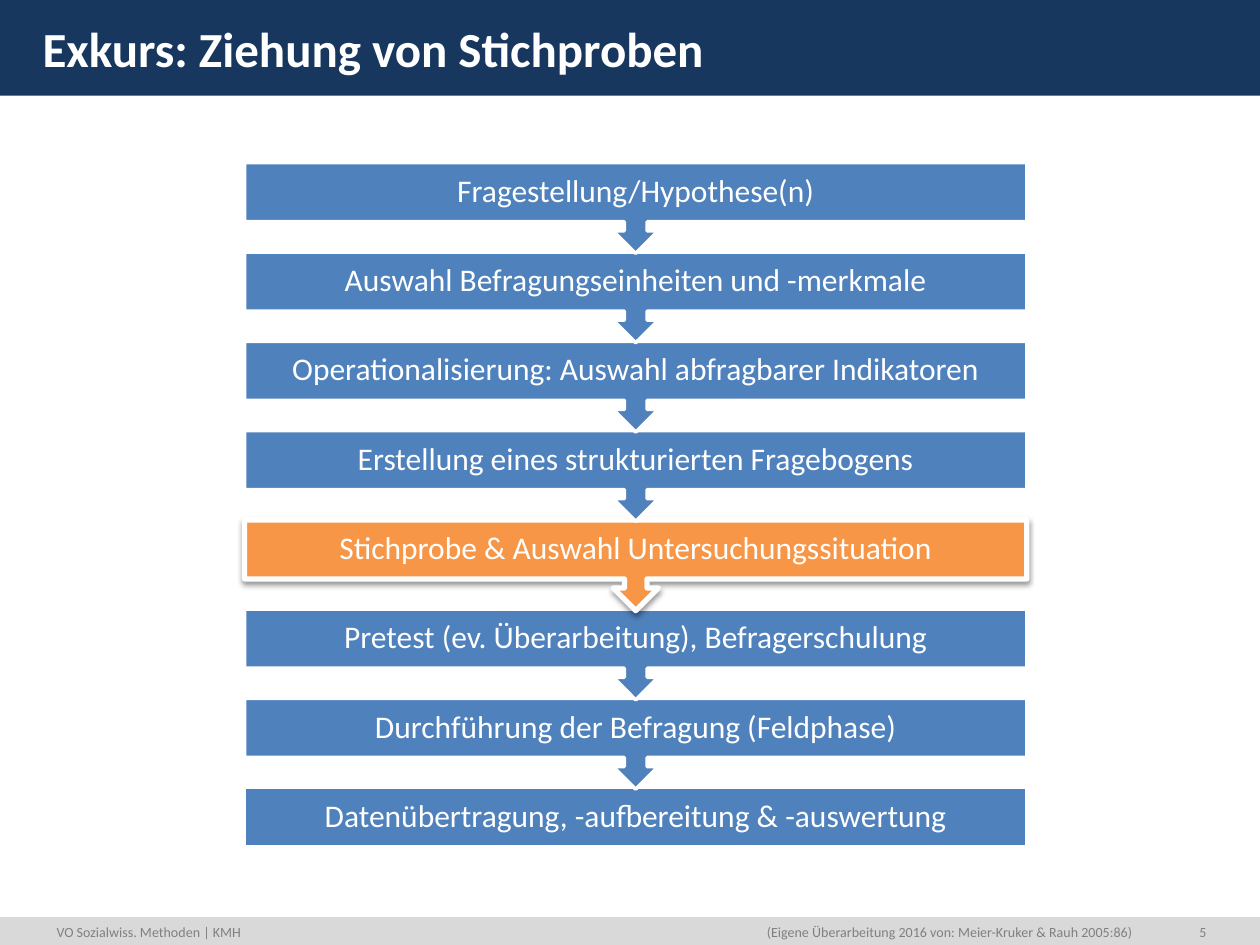
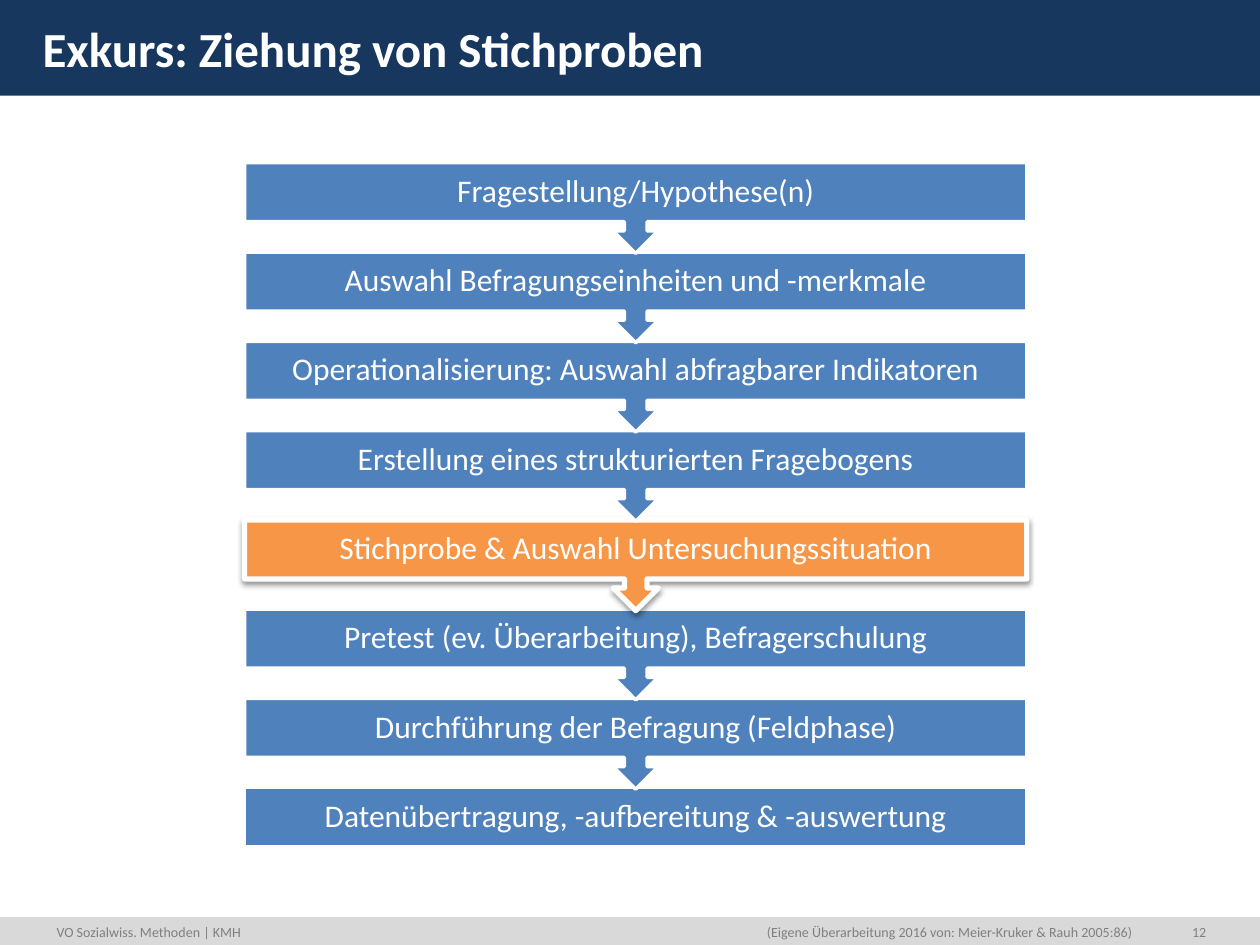
from lxml.etree import SubElement
from pptx import Presentation
from pptx.dml.color import RGBColor
from pptx.enum.shapes import MSO_SHAPE as Shape
from pptx.enum.text import MSO_ANCHOR as Anchor, PP_ALIGN as Align
from pptx.oxml.ns import qn
from pptx.util import Cm, Pt

NAVY = RGBColor(0x17, 0x37, 0x5E)
LIGHT_GREY = RGBColor(0xD9, 0xD9, 0xD9)
GREY = RGBColor(0x80, 0x80, 0x80)
BLUE = RGBColor(0x4F, 0x81, 0xBD)
ORANGE = RGBColor(0xF7, 0x96, 0x46)
WHITE = RGBColor(0xFF, 0xFF, 0xFF)

FONT = "Calibri"
SLIDE_WIDTH, SLIDE_HEIGHT = 25.4, 19.05
FOOTER_TOP, FOOTER_TEXT_HEIGHT = 18.49, 0.61
STEP_LEFT, STEP_TOP, STEP_WIDTH = 4.93, 3.28, 15.77
STEP_HEIGHT, CALLOUT_HEIGHT, STEP_PITCH = 1.19, 1.83, 1.8

TITLE = "Exkurs: Ziehung von Stichproben"
COURSE = "VO Sozialwiss. Methoden | KMH"
CITATION = "(Eigene Überarbeitung 2016 von: Meier-Kruker & Rauh 2005:86)"
CURRENT_STEP = "Stichprobe & Auswahl Untersuchungssituation"
STEPS = [
    "Fragestellung/Hypothese(n)",
    "Auswahl Befragungseinheiten und -merkmale",
    "Operationalisierung: Auswahl abfragbarer Indikatoren",
    "Erstellung eines strukturierten Fragebogens",
    CURRENT_STEP,
    "Pretest (ev. Überarbeitung), Befragerschulung",
    "Durchführung der Befragung (Feldphase)",
    "Datenübertragung, -aufbereitung & -auswertung",
]
PAGE_NUMBERS = [5, 12]


class Deck:
    def __init__(self):
        self.presentation = Presentation()
        self.presentation.slide_width = Cm(SLIDE_WIDTH)
        self.presentation.slide_height = Cm(SLIDE_HEIGHT)
        self.slide = None

    def shape(self, kind, left, top, width, height, fill, line_width=0):
        shape = self.slide.shapes.add_shape(
            kind, Cm(left), Cm(top), Cm(width), Cm(height))
        shape.shadow.inherit = False
        shape.fill.solid()
        shape.fill.fore_color.rgb = fill
        if line_width:
            shape.line.color.rgb = WHITE
            shape.line.width = Pt(line_width)
        else:
            shape.line.fill.background()
        return shape

    def text(self, wording, left, top, width, height, size, color,
             align=Align.LEFT, anchor=Anchor.TOP):
        box = self.slide.shapes.add_textbox(
            Cm(left), Cm(top), Cm(width), Cm(height))
        frame = box.text_frame
        frame.word_wrap = True
        frame.vertical_anchor = anchor
        paragraph = frame.paragraphs[0]
        paragraph.text = wording
        paragraph.alignment = align
        paragraph.font.name = FONT
        paragraph.font.size = Pt(size)
        paragraph.font.color.rgb = color
        return frame

    def footer_text(self, wording, left, width, align=Align.LEFT):
        self.text(wording, left, FOOTER_TOP, width, FOOTER_TEXT_HEIGHT,
                  8, GREY, align)

    def drop_shadow(self, shape):
        effects = shape._element.spPr.find(qn("a:effectLst"))
        shadow = SubElement(
            effects, qn("a:outerShdw"), blurRad=str(Pt(3.1)),
            dist=str(Pt(1.6)), dir="5400000", rotWithShape="0")
        black = SubElement(shadow, qn("a:srgbClr"), val="000000")
        SubElement(black, qn("a:alpha"), val="38000")

    def step(self, wording, top, is_last, is_current):
        kind = Shape.RECTANGLE if is_last else Shape.UP_ARROW_CALLOUT
        height = STEP_HEIGHT if is_last else CALLOUT_HEIGHT
        fill, line_width = (ORANGE, 3) if is_current else (BLUE, 2)
        block = self.shape(kind, STEP_LEFT, top, STEP_WIDTH, height,
                           fill, line_width)
        if not is_last:
            block.rotation = 180
        if is_current:
            self.drop_shadow(block)
        frame = self.text(wording, STEP_LEFT, top, STEP_WIDTH, STEP_HEIGHT,
                          18, WHITE, Align.CENTER, Anchor.MIDDLE)
        frame.margin_left = frame.margin_right = Cm(0.36)
        frame.margin_top = frame.margin_bottom = Cm(0.36)
        frame.paragraphs[0].line_spacing = 0.9

    def process(self, steps, current):
        for index, wording in reversed(list(enumerate(steps))):
            self.step(wording, STEP_TOP + index * STEP_PITCH,
                      index == len(steps) - 1, wording == current)

    def new_slide(self, title, citation, page_number):
        blank = self.presentation.slide_layouts[6]
        self.slide = self.presentation.slides.add_slide(blank)
        self.shape(Shape.RECTANGLE, 0, FOOTER_TOP, SLIDE_WIDTH,
                   SLIDE_HEIGHT - FOOTER_TOP, LIGHT_GREY)
        self.shape(Shape.RECTANGLE, 0, 0, SLIDE_WIDTH, 1.93, NAVY)
        heading = self.text(title, 0.61, 0.25, 23.98, 1.27, 28, WHITE)
        heading.paragraphs[0].font.bold = True
        self.footer_text(COURSE, 0.89, 7.59)
        self.footer_text(citation, 12.29, 10.8, Align.RIGHT)
        self.footer_text(str(page_number), 23.5, 1.07, Align.RIGHT)


def main():
    deck = Deck()
    for page_number in PAGE_NUMBERS:
        deck.new_slide(TITLE, CITATION, page_number)
        deck.process(STEPS, CURRENT_STEP)
    deck.presentation.save("out.pptx")


if __name__ == "__main__":
    main()
